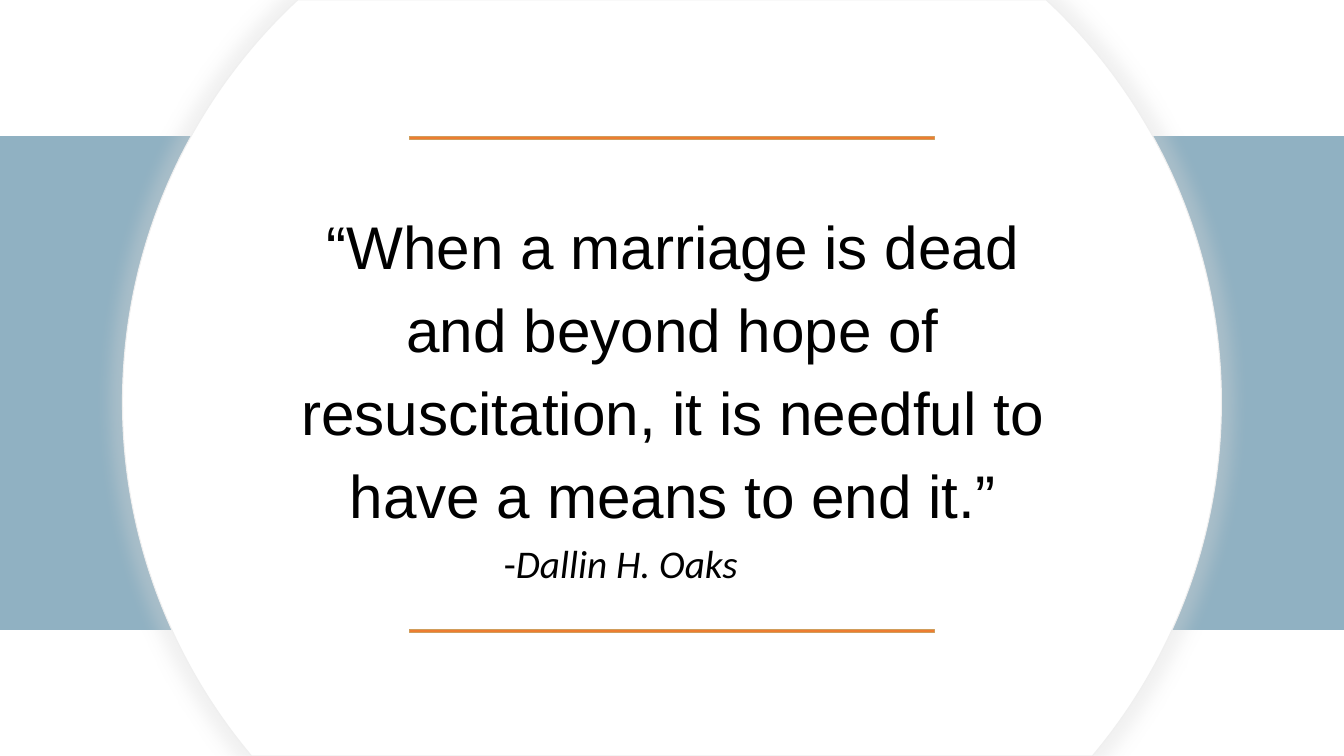
import math
from dataclasses import dataclass

import lxml.etree
import pptx
import pptx.dml.color
import pptx.enum.shapes
import pptx.enum.text
import pptx.oxml.ns
import pptx.util

QUOTE = [("“When a marriage is dead and beyond hope of resuscitation, "
          "it is needful to have a means to end it.”", False)]
AUTHOR = [("-", False), ("Dallin H. Oaks", True)]


@dataclass(frozen=True)
class Theme:
    band: str = "90B1C2"
    disc: str = "FFFFFF"
    disc_line: str = "EFEFEF"
    shadow: str = "D8D8D8"
    rule: str = "ED7D31"
    rule_line: str = "D09D5C"
    text: str = "000000"
    quote_font: str = "Arial"
    author_font: str = "Calibri"
    quote_size: int = 43
    author_size: int = 28
    line_width: float = 0.75


THEME = Theme()
Inches = pptx.util.Inches
qn = pptx.oxml.ns.qn
WIDTH, HEIGHT = 13.33, 7.5
BAND_TOP, BAND_HEIGHT = 1.35, 4.9
RULE_WIDTH, RULE_HEIGHT = 5.2, 0.03
CENTER_X, CENTER_Y, RADIUS = WIDTH / 2, 3.99, 5.45


def rgb(value):
    return pptx.dml.color.RGBColor.from_string(value)


def paint(sp, fill, line):
    sp.shadow.inherit = False
    sp.fill.solid()
    sp.fill.fore_color.rgb = rgb(fill)
    sp.line.color.rgb = rgb(line)
    sp.line.width = pptx.util.Pt(THEME.line_width)


def add_bar(s, left, top, width, height, fill, line):
    kind = pptx.enum.shapes.MSO_SHAPE.RECTANGLE
    sp = s.shapes.add_shape(kind, *map(Inches, (left, top, width, height)))
    paint(sp, fill, line)


def on_circle(angle, slope=0.0):
    x = CENTER_X + RADIUS * (math.cos(angle) - slope * math.sin(angle))
    y = CENTER_Y + RADIUS * (math.sin(angle) + slope * math.cos(angle))
    return Inches(x), Inches(y)


def bend(line, start, end, left, top):
    slope = 4 / 3 * math.tan((end - start) / 4)
    curve = lxml.etree.Element(qn("a:cubicBezTo"))
    for x, y in (on_circle(start, slope), on_circle(end, -slope), on_circle(end)):
        lxml.etree.SubElement(curve, qn("a:pt"), x=str(x - left), y=str(y - top))
    line.getparent().replace(line, curve)


def add_disc(s):
    top = math.asin(-CENTER_Y / RADIUS)
    bottom = math.asin((HEIGHT - CENTER_Y) / RADIUS)
    angles = [top, 0, bottom, math.pi - bottom, math.pi, math.pi - top]
    start, *rest = map(on_circle, angles)
    builder = s.shapes.build_freeform(*start)
    builder.add_line_segments(rest, close=True)
    sp = builder.convert_to_shape()
    paint(sp, THEME.disc, THEME.disc_line)
    lines = list(sp.element.iter(qn("a:lnTo")))
    for i in (0, 1, 3, 4):
        bend(lines[i], angles[i], angles[i + 1], sp.left, sp.top)
    effects = sp.element.spPr.find(qn("a:effectLst"))
    shadow = lxml.etree.SubElement(effects, qn("a:outerShdw"),
                                   blurRad=str(pptx.util.Pt(11)), dist="0", dir="0",
                                   sx="102000", sy="102000",
                                   algn="ctr", rotWithShape="0")
    color = lxml.etree.SubElement(shadow, qn("a:srgbClr"), val=THEME.shadow)
    lxml.etree.SubElement(color, qn("a:alpha"), val="37000")


def add_text(s, box, runs, font, size, align, spacing=None):
    tf = s.shapes.add_textbox(*map(Inches, box)).text_frame
    tf.word_wrap = True
    tf.auto_size = pptx.enum.text.MSO_AUTO_SIZE.SHAPE_TO_FIT_TEXT
    p = tf.paragraphs[0]
    p.alignment = align
    p.line_spacing = spacing
    for text, italic in runs:
        r = p.add_run()
        r.text = text
        r.font.name = font
        r.font.size = pptx.util.Pt(size)
        r.font.italic = italic
        r.font.color.rgb = rgb(THEME.text)
    return tf


def main():
    prs = pptx.Presentation()
    prs.slide_width, prs.slide_height = Inches(WIDTH), Inches(HEIGHT)
    s = prs.slides.add_slide(prs.slide_layouts[6])
    add_bar(s, 0, BAND_TOP, WIDTH, BAND_HEIGHT, THEME.band, THEME.band)
    add_disc(s)
    for top in (BAND_TOP, BAND_TOP + BAND_HEIGHT):
        add_bar(s, CENTER_X - RULE_WIDTH / 2, top, RULE_WIDTH, RULE_HEIGHT,
                THEME.rule, THEME.rule_line)
    align = pptx.enum.text.PP_ALIGN
    tf = add_text(s, (2.73, 1.87, 7.88, 3.53), QUOTE, THEME.quote_font,
                  THEME.quote_size, align.CENTER, 1.15)
    tf.margin_left = tf.margin_right = Inches(0.1)
    tf.margin_top = tf.margin_bottom = Inches(0.1)
    add_text(s, (4.9, 5.3, 3.53, 0.57), AUTHOR, THEME.author_font,
             THEME.author_size, align.LEFT)
    prs.save("out.pptx")


if __name__ == "__main__":
    main()
